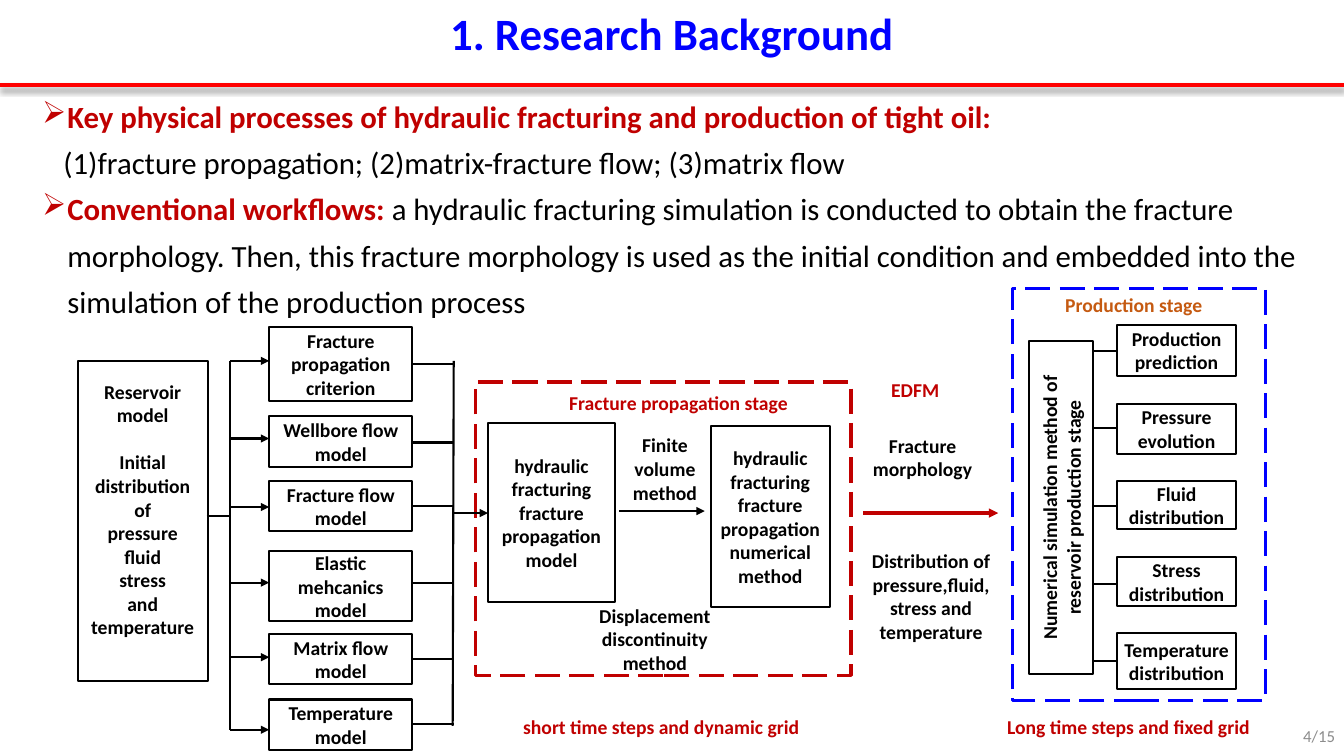
from dataclasses import dataclass

from lxml import etree
from pptx import Presentation
from pptx.dml.color import RGBColor
from pptx.enum.dml import MSO_LINE
from pptx.enum.shapes import MSO_CONNECTOR, MSO_SHAPE
from pptx.enum.text import MSO_ANCHOR, PP_ALIGN
from pptx.oxml.ns import qn
from pptx.util import Pt

EMU_PER_PX = 9144
STRAIGHT = MSO_CONNECTOR.STRAIGHT
RECTANGLE = MSO_SHAPE.RECTANGLE
LONG_DASH = MSO_LINE.LONG_DASH
TOP, MIDDLE = MSO_ANCHOR.TOP, MSO_ANCHOR.MIDDLE
LEFT, CENTER, RIGHT = PP_ALIGN.LEFT, PP_ALIGN.CENTER, PP_ALIGN.RIGHT
DEFAULT_INSETS = (10, 5, 10, 5)
TIGHT_INSETS = (4, 4, 4, 4)
NO_INSETS = (0, 0, 0, 0)


@dataclass(frozen=True)
class Theme:
    font: str = "Calibri"
    black: str = "000000"
    white: str = "FFFFFF"
    red: str = "FF0000"
    crimson: str = "C00000"
    blue: str = "0000FF"
    orange: str = "C55A11"
    gray: str = "8C8C8C"
    title: int = 32
    body: int = 22
    label: int = 14
    footer: int = 12
    thin: float = 1.5
    medium: float = 2.25
    thick: float = 3


THEME = Theme()


def px(length):
    return length * EMU_PER_PX


def add_xml(parent, tag, **attributes):
    return etree.SubElement(parent, qn(tag), attributes)


class Diagram:
    def __init__(self, page, theme):
        self.page = page
        self.theme = theme

    def style_font(self, font, size, color, bold):
        font.name = self.theme.font
        font.size = Pt(size)
        font.bold = bold
        font.color.rgb = RGBColor.from_string(color)

    def fill_text(self, shape, lines, size=None, color=None, bold=True, align=CENTER,
                  anchor=TOP, insets=DEFAULT_INSETS):
        frame = shape.text_frame
        frame.word_wrap = True
        frame.vertical_anchor = anchor
        frame.margin_left, frame.margin_top, frame.margin_right, frame.margin_bottom = map(px, insets)
        for index, line in enumerate(lines):
            para = frame.add_paragraph() if index else frame.paragraphs[0]
            para.text = line
            para.alignment = align
            self.style_font(para.font, size or self.theme.label, color or self.theme.black, bold)
        return frame

    def text(self, bounds, *lines, **style):
        box = self.page.shapes.add_textbox(*map(px, bounds))
        return self.fill_text(box, lines, **style)

    def rect(self, bounds, *lines, insets=DEFAULT_INSETS, rotation=0):
        box = self.outline(bounds, self.theme.black, self.theme.thin)
        box.rotation = rotation
        return self.fill_text(box, lines, anchor=MIDDLE, insets=insets)

    def outline(self, bounds, color, width, dash=None):
        box = self.page.shapes.add_shape(RECTANGLE, *map(px, bounds))
        box.shadow.inherit = False
        box.fill.solid()
        box.fill.fore_color.rgb = RGBColor.from_string(self.theme.white)
        box.line.color.rgb = RGBColor.from_string(color)
        box.line.width = Pt(width)
        if dash:
            box.line.dash_style = dash
        return box

    def line(self, x1, y1, x2, y2, color=None, width=None, arrow=False, shadow=False):
        link = self.page.shapes.add_connector(STRAIGHT, *map(px, (x1, y1, x2, y2)))
        link.line.color.rgb = RGBColor.from_string(color or self.theme.black)
        link.line.width = Pt(width or self.theme.thin)
        properties = link.element.spPr
        if arrow:
            add_xml(properties.find(qn("a:ln")), "a:tailEnd", type="triangle")
        effects = add_xml(properties, "a:effectLst")
        if shadow:
            outer = add_xml(effects, "a:outerShdw", blurRad="50800", dist="38100",
                            dir="5400000", algn="t", rotWithShape="0")
            tint = add_xml(outer, "a:srgbClr", val=self.theme.black)
            add_xml(tint, "a:alpha", val="40000")

    def body(self, bounds, paragraphs):
        box = self.page.shapes.add_textbox(*map(px, bounds))
        frame = box.text_frame
        frame.word_wrap = True
        for index, (margin, indent, bullet, spans) in enumerate(paragraphs):
            para = frame.add_paragraph() if index else frame.paragraphs[0]
            para.line_spacing = 1.25
            properties = para._p.get_or_add_pPr()
            properties.set("marL", str(px(margin)))
            properties.set("indent", str(px(indent)))
            if bullet:
                tint = add_xml(properties, "a:buClr")
                add_xml(tint, "a:srgbClr", val=self.theme.crimson)
                add_xml(properties, "a:buChar", char=bullet)
            para.font.name = self.theme.font
            para.font.size = Pt(self.theme.body)
            for content, color, bold in spans:
                span = para.add_run()
                span.text = content
                span.font.bold = bold
                span.font.color.rgb = RGBColor.from_string(color)


MODELS = [
    ("Fracture propagation criterion", 324, 74, 358, 361),
    ("Wellbore flow model", 413, 50, 435, 439),
    ("Fracture flow model", 477, 50, 503, 502),
    ("Elastic mehcanics model", 547, 69, 578, 578),
    ("Matrix flow model", 629, 50, 652, 654),
    ("Temperature model", 694, 50, 724, 718),
]
OUTPUTS = [
    ("Production prediction", 322, 51),
    ("Pressure evolution", 401, 49),
    ("Fluid distribution", 477, 48),
    ("Stress distribution", 553, 48),
    ("Temperature distribution", 628, 56),
]


def draw_header(diagram):
    theme = diagram.theme
    diagram.line(0, 84, 1333, 84, theme.red, theme.thick, shadow=True)
    diagram.text((0, 1, 1333, 64), "1. Research Background", size=theme.title, color=theme.blue)
    diagram.text((1256, 710, 78, 40), "4/15", size=theme.footer, color=theme.gray,
                 bold=False, align=RIGHT, anchor=MIDDLE)
    diagram.body((32, 83, 1267, 225), [
        (25, -25, "➢", [("Key physical processes of hydraulic fracturing and production of tight oil:",
                         theme.crimson, True)]),
        (21, 0, None, [("(1)fracture propagation; (2)matrix-fracture flow; (3)matrix flow",
                        theme.black, False)]),
        (25, -25, "➢", [
            ("Conventional workflows: ", theme.crimson, True),
            ("a hydraulic fracturing simulation is conducted to obtain the fracture morphology. "
             "Then, this fracture morphology is used as the initial condition and embedded into "
             "the simulation of the production process", theme.black, False)]),
    ])


def draw_inputs(diagram):
    reservoir = diagram.rect((77, 358, 129, 318), "Reservoir model", "Initial", "distribution", "of",
                             "pressure", "fluid", "stress", "and", "temperature",
                             insets=(4, 4, 4, 28))
    reservoir.paragraphs[1].space_before = Pt(17)
    diagram.line(205, 512, 227, 512)
    diagram.line(228, 358, 228, 724)
    for name, top, height, entry, leave in MODELS:
        diagram.line(228, entry, 267, entry, arrow=True)
        diagram.rect((267, top, 142, height), name)
        diagram.line(409, leave, 450, leave)
    diagram.line(450, 358, 449, 720)


def draw_fracture_stage(diagram):
    theme = diagram.theme
    diagram.outline((472, 379, 372, 291), theme.crimson, theme.medium, LONG_DASH)
    diagram.line(449, 509, 484, 509, arrow=True)
    diagram.rect((484, 420, 126, 177), "hydraulic fracturing fracture propagation model",
                 insets=TIGHT_INSETS)
    diagram.line(614, 507, 699, 507, arrow=True)
    diagram.rect((705, 423, 118, 179), "hydraulic fracturing fracture propagation numerical method",
                 insets=(0, 4, 0, 4))
    diagram.text((610, 425, 99, 81), "Finite volume method")
    diagram.text((577, 594, 145, 81), "Displacement", "discontinuity", "method")
    diagram.text((496, 383, 354, 34), "Fracture propagation stage", color=theme.crimson)
    diagram.text((509, 704, 366, 34), "short time steps and dynamic grid",
                 color=theme.crimson, align=LEFT)


def draw_transfer(diagram):
    theme = diagram.theme
    diagram.text((874, 370, 108, 34), "EDFM", color=theme.crimson, align=LEFT)
    diagram.line(856, 509, 990, 509, theme.crimson, theme.medium, arrow=True)
    diagram.text((856, 430, 118, 47), "Fracture morphology", insets=NO_INSETS)
    diagram.text((843, 540, 161, 104), "Distribution of", "pressure,fluid,", "stress and", "temperature")


def draw_production_stage(diagram):
    theme = diagram.theme
    diagram.outline((1004, 286, 251, 409), theme.blue, theme.medium, LONG_DASH)
    diagram.rect((887, 472, 331, 63), "Numerical simulation method of reservoir production stage",
                 insets=TIGHT_INSETS, rotation=270)
    for index, (name, top, height) in enumerate(OUTPUTS):
        middle = 348 + 77 * index
        diagram.rect((1108, top, 118, height), name, insets=NO_INSETS)
        diagram.line(1084, middle, 1108, middle)
    diagram.text((1046, 291, 157, 24), "Production stage", color=theme.orange, insets=NO_INSETS)
    diagram.text((989, 704, 344, 34), "Long time steps and fixed grid",
                 color=theme.crimson, align=LEFT)


def main():
    deck = Presentation()
    deck.slide_width, deck.slide_height = px(1333), px(750)
    diagram = Diagram(deck.slides.add_slide(deck.slide_layouts[6]), THEME)
    for draw in (draw_header, draw_inputs, draw_fracture_stage, draw_transfer, draw_production_stage):
        draw(diagram)
    deck.save("out.pptx")


if __name__ == "__main__":
    main()
